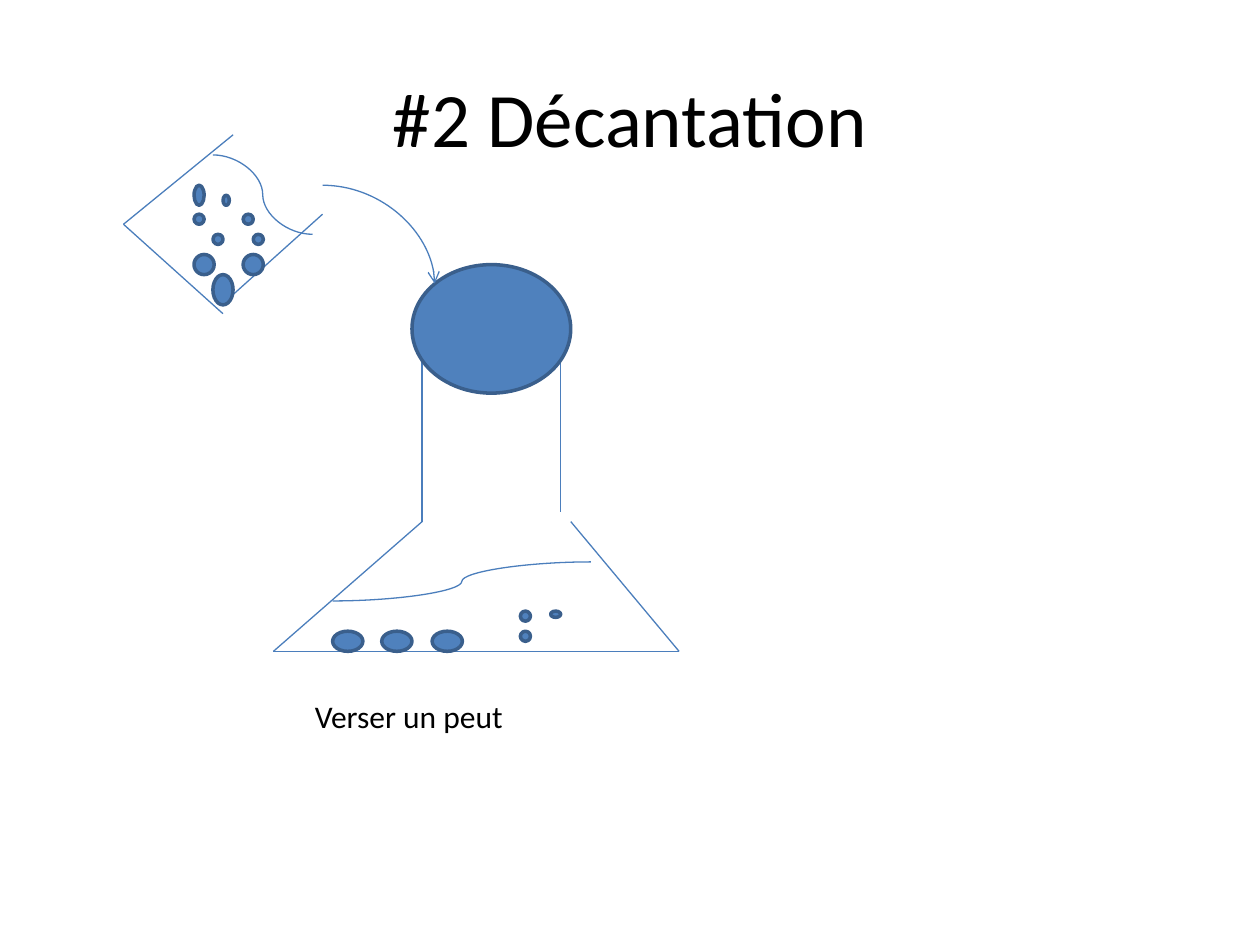
from dataclasses import dataclass

from lxml.etree import SubElement
from pptx import Presentation
from pptx.dml.color import RGBColor
from pptx.enum.shapes import MSO_CONNECTOR as Link, MSO_SHAPE as Shape
from pptx.enum.text import MSO_ANCHOR as Anchor, PP_ALIGN as Align
from pptx.oxml.ns import qn
from pptx.util import Pt

PX = 9144  # one hundredth of an inch


@dataclass(frozen=True)
class Theme:
    font: str = "Calibri"
    text: RGBColor = RGBColor(0, 0, 0)
    line: RGBColor = RGBColor(0x4B, 0x7E, 0xBC)
    fill: RGBColor = RGBColor(0x4F, 0x81, 0xBD)
    edge: RGBColor = RGBColor(0x3A, 0x5F, 0x8C)
    title_size: int = 44
    caption_size: int = 18
    line_width: float = 0.75
    edge_width: float = 2


THEME = Theme()


def emu(*lengths):
    return [length * PX for length in lengths]


def write(shape, text, size, align):
    frame = shape.text_frame
    frame.word_wrap = True
    frame.text = text
    para = frame.paragraphs[0]
    para.alignment = align
    font = para.runs[0].font
    font.name, font.size = THEME.font, Pt(size)
    font.color.rgb = THEME.text


def add_line(page, box, start, end, kind=Link.STRAIGHT):
    left, top = box[:2]
    points = emu(left + start[0], top + start[1], left + end[0], top + end[1])
    line = page.shapes.add_connector(kind, *points)
    line.line.color.rgb = THEME.line
    line.line.width = Pt(THEME.line_width)
    SubElement(line._element.spPr, qn("a:effectLst"))
    return line


def add_oval(page, box, left, top, width, height):
    place = emu(box[0] + left, box[1] + top, width, height)
    oval = page.shapes.add_shape(Shape.OVAL, *place)
    oval.shadow.inherit = False
    oval.fill.solid()
    oval.fill.fore_color.rgb = THEME.fill
    oval.line.color.rgb = THEME.edge
    oval.line.width = Pt(THEME.edge_width)


def add_title(page, box):
    title = page.shapes.title
    title.left, title.top, title.width, title.height = emu(*box)
    title.text_frame.vertical_anchor = Anchor.MIDDLE
    write(title, "#2 Décantation", THEME.title_size, Align.CENTER)


def add_flask(page, box):
    width, height = box[2:]
    # Base, sloping sides and neck
    shoulder, neck_left, neck_right = 204, 118, 228
    outline = [
        ((neck_left, shoulder), (0, height)),
        ((0, height), (width, height)),
        ((width, height), (236, shoulder)),
        ((neck_right, 196), (neck_right, 71)),
        ((neck_left, shoulder), (neck_left, 63)),
    ]
    for start, end in outline:
        add_line(page, box, start, end)
    # Opening and water surface
    add_oval(page, box, 110, 0, 126, 102)
    add_line(page, box, (47, 267), (252, 236), Link.CURVE)
    # Sediment, then fine grains
    for index in range(3):
        add_oval(page, box, 47 + index * 79 // 2, height - 16, 24, 16)
    for grain in [(196, 275, 8, 8), (220, 275, 8, 5), (196, 291, 8, 8)]:
        add_oval(page, box, *grain)


def add_beaker(page, box):
    width, height = box[2:]
    # Tilted walls and water surface
    middle = height // 2
    walls = [
        ((87, 0), (0, middle)),
        ((0, middle), (width // 2, height)),
        ((width // 2, height - 8), (width, middle - 8)),
    ]
    for start, end in walls:
        add_line(page, box, start, end)
    add_line(page, box, (71, 16), (150, 79), Link.CURVE)
    # Grains: large, odd and small
    large = [(56, 95, 16, 16), (95, 95, 16, 16), (71, 111, 16, 24)]
    odd = [(79, 48, 5, 8), (56, 40, 8, 16)]
    small = [(x, y, 8, 8) for x, y in [(56, 63), (95, 63), (71, 79), (103, 79)]]
    for grain in large + odd + small:
        add_oval(page, box, *grain)


def add_pouring_arrow(page, box):
    arrow = add_line(page, box, (0, 0), box[2:], Link.CURVE)
    arrow._element.spPr.find(qn("a:prstGeom")).set("prst", "curvedConnector2")
    SubElement(arrow.line._get_or_add_ln(), qn("a:tailEnd"), type="arrow")


def add_caption(page, box):
    caption = page.shapes.add_textbox(*emu(*box))
    write(caption, "Verser un peut", THEME.caption_size, Align.LEFT)


def main():
    deck = Presentation()
    deck.slide_width, deck.slide_height = emu(1000, 750)
    page = deck.slides.add_slide(deck.slide_layouts[5])
    add_title(page, (50, 30, 900, 125))
    add_flask(page, (217, 210, 322, 307))
    add_beaker(page, (98, 107, 158, 142))
    add_pouring_arrow(page, (256, 147, 89, 78))
    add_caption(page, (240, 548, 236, 40))
    deck.save("out.pptx")


if __name__ == "__main__":
    main()
